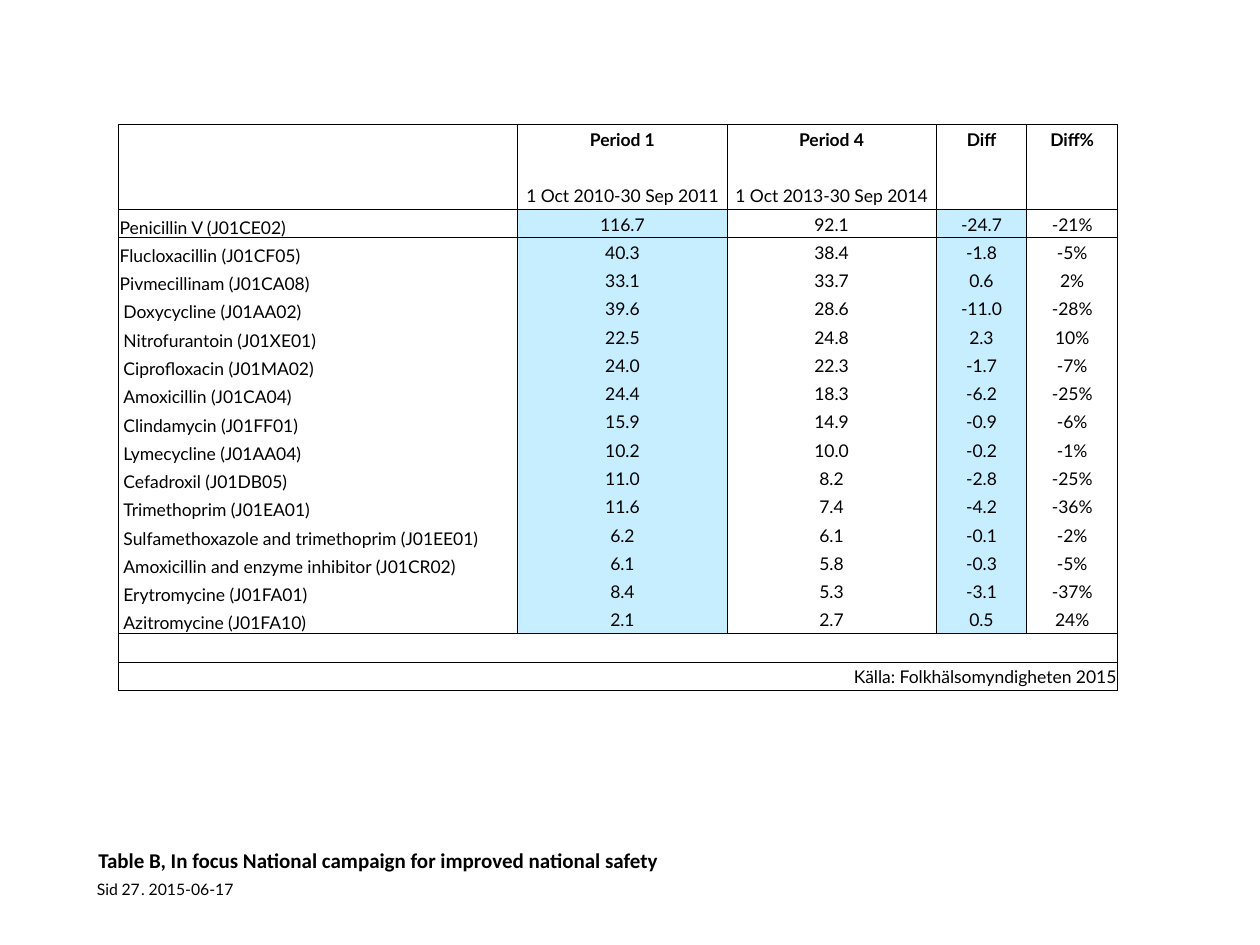
from typing import NamedTuple

from lxml import etree
from pptx import Presentation
from pptx.dml.color import RGBColor
from pptx.enum.text import MSO_ANCHOR, MSO_AUTO_SIZE, PP_ALIGN
from pptx.oxml.ns import qn
from pptx.util import Inches, Pt

LEFT, CENTER, RIGHT = PP_ALIGN.LEFT, PP_ALIGN.CENTER, PP_ALIGN.RIGHT
TOP, MIDDLE, BOTTOM = MSO_ANCHOR.TOP, MSO_ANCHOR.MIDDLE, MSO_ANCHOR.BOTTOM
NO_AUTOSIZE = MSO_AUTO_SIZE.NONE
BLACK = "000000"
LIGHT_BLUE = "C6EEFF"
PLAIN_TABLE_STYLE = "{2D5ABB26-0587-4C30-8999-92F81FD0307C}"
TITLE_ONLY_LAYOUT = 5
COLUMN_WIDTHS = (3.17, 1.66, 1.66, 0.72, 0.72)
SHADED_COLUMNS = (1, 3)
ROW_COUNT = 20
TABLE_HEIGHT = 4.49
FIRST_DRUG_ROW = 3
FLUSH_DRUGS = 3
SOURCE_CELL = (19, 2)


class Drug(NamedTuple):
    name: str
    period_1: str
    period_4: str
    difference: str
    percent: str


class FooterText(NamedTuple):
    text: str
    left: float
    top: float
    width: float
    height: float
    alignment: PP_ALIGN = LEFT
    anchor: MSO_ANCHOR = BOTTOM


HEADINGS = ("", "Period 1", "Period 4", "Diff", "Diff%")
PERIODS = ("", "1 Oct 2010-30 Sep 2011", "1 Oct 2013-30 Sep 2014", "", "")
DRUGS = (
    Drug("Penicillin V (J01CE02)", "116.7", "92.1", "-24.7", "-21%"),
    Drug("Flucloxacillin (J01CF05)", "40.3", "38.4", "-1.8", "-5%"),
    Drug("Pivmecillinam (J01CA08)", "33.1", "33.7", "0.6", "2%"),
    Drug("Doxycycline (J01AA02)", "39.6", "28.6", "-11.0", "-28%"),
    Drug("Nitrofurantoin (J01XE01)", "22.5", "24.8", "2.3", "10%"),
    Drug("Ciprofloxacin (J01MA02)", "24.0", "22.3", "-1.7", "-7%"),
    Drug("Amoxicillin (J01CA04)", "24.4", "18.3", "-6.2", "-25%"),
    Drug("Clindamycin (J01FF01)", "15.9", "14.9", "-0.9", "-6%"),
    Drug("Lymecycline (J01AA04)", "10.2", "10.0", "-0.2", "-1%"),
    Drug("Cefadroxil (J01DB05)", "11.0", "8.2", "-2.8", "-25%"),
    Drug("Trimethoprim (J01EA01)", "11.6", "7.4", "-4.2", "-36%"),
    Drug("Sulfamethoxazole and trimethoprim (J01EE01)", "6.2", "6.1", "-0.1", "-2%"),
    Drug("Amoxicillin and enzyme inhibitor (J01CR02)", "6.1", "5.8", "-0.3", "-5%"),
    Drug("Erytromycine (J01FA01)", "8.4", "5.3", "-3.1", "-37%"),
    Drug("Azitromycine (J01FA10)", "2.1", "2.7", "0.5", "24%"),
)
FOOTERS = (
    FooterText(".", 1.12, 6.98, 0.06, 0.15, anchor=TOP),
    FooterText("Sid", 0.77, 6.98, 0.17, 0.15, anchor=TOP),
    FooterText("27", 0.78, 6.93, 0.33, 0.2, alignment=RIGHT),
    FooterText("2015-06-17", 1.18, 6.93, 0.86, 0.2),
)


def color(value: str) -> RGBColor:
    return RGBColor.from_string(value)


def format_paragraph(paragraph, size: float, name: str = "Lato", bold: bool = False) -> None:
    paragraph.font.size = Pt(size)
    paragraph.font.name = name
    paragraph.font.bold = bold
    paragraph.font.color.rgb = color(BLACK)


def clear_margins(frame) -> None:
    frame.margin_left = frame.margin_right = 0
    frame.margin_top = frame.margin_bottom = 0


def add_border(cell, tag: str) -> None:
    line = etree.SubElement(cell._tc.get_or_add_tcPr(), qn(tag), w=str(Pt(0.5)))
    fill = etree.SubElement(line, qn("a:solidFill"))
    etree.SubElement(fill, qn("a:srgbClr"), val=BLACK)


def draw_borders(cell, row: int, column: int) -> None:
    last_column = len(COLUMN_WIDTHS) - 1
    drug_end = FIRST_DRUG_ROW + len(DRUGS)
    in_grid = row < drug_end
    reaches_right = column == last_column or (row, column) == SOURCE_CELL
    if in_grid or column == 0:
        add_border(cell, "a:lnL")
    if in_grid or reaches_right:
        add_border(cell, "a:lnR")
    if row in (0, FIRST_DRUG_ROW, drug_end):
        add_border(cell, "a:lnT")
    if row in (FIRST_DRUG_ROW - 1, drug_end - 1, ROW_COUNT - 1):
        add_border(cell, "a:lnB")


def fill_cell(cell, row: int, column: int, text: str) -> None:
    is_drug = FIRST_DRUG_ROW <= row < FIRST_DRUG_ROW + len(DRUGS)
    is_name = is_drug and column == 0
    indented = is_name and row >= FIRST_DRUG_ROW + FLUSH_DRUGS
    draw_borders(cell, row, column)
    if is_drug and column in SHADED_COLUMNS:
        cell.fill.solid()
        cell.fill.fore_color.rgb = color(LIGHT_BLUE)
    else:
        cell.fill.background()
    cell.margin_left = Inches(0.04 if indented else 0.01)
    cell.margin_right = cell.margin_top = Inches(0.01)
    cell.margin_bottom = 0
    cell.vertical_anchor = BOTTOM if is_name else MIDDLE
    paragraph = cell.text_frame.paragraphs[0]
    if text:
        paragraph.text = text
    else:
        etree.SubElement(paragraph._p, qn("a:endParaRPr"), sz="1000")
    paragraph.alignment = LEFT if is_name else CENTER
    if (row, column) == SOURCE_CELL:
        paragraph.alignment = RIGHT
    format_paragraph(paragraph, 10, bold=row == 0)


def add_drug_table(slide) -> None:
    column_count = len(COLUMN_WIDTHS)
    table = slide.shapes.add_table(
        ROW_COUNT, column_count, Inches(0.94), Inches(0.99),
        Inches(sum(COLUMN_WIDTHS)), Inches(TABLE_HEIGHT),
    ).table
    table.first_row = table.horz_banding = False
    table._tbl.tblPr.find(qn("a:tableStyleId")).text = PLAIN_TABLE_STYLE
    for column, width in zip(table.columns, COLUMN_WIDTHS):
        column.width = Inches(width)
    for row in table.rows:
        row.height = Inches(TABLE_HEIGHT / ROW_COUNT)
    empty = ("",) * column_count
    source = ("", "", "Källa: Folkhälsomyndigheten 2015", "", "")
    contents = (HEADINGS, empty, PERIODS, *DRUGS, empty, source)
    for row, texts in enumerate(contents):
        for column, text in enumerate(texts):
            fill_cell(table.cell(row, column), row, column, text)
    table.cell(*SOURCE_CELL).merge(table.cell(ROW_COUNT - 1, column_count - 1))


def add_title(slide) -> None:
    title = slide.shapes.title
    title.left, title.top = Inches(0.78), Inches(6.48)
    title.width, title.height = Inches(4.69), Inches(0.45)
    frame = title.text_frame
    clear_margins(frame)
    frame.auto_size = NO_AUTOSIZE
    frame.vertical_anchor = BOTTOM
    frame.text = "Table B, In focus National campaign for improved national safety"
    paragraph = frame.paragraphs[0]
    paragraph.alignment = LEFT
    paragraph.line_spacing = Pt(34)
    format_paragraph(paragraph, 12, "Calibri", True)


def add_footer(slide, footer: FooterText) -> None:
    shape = slide.shapes.add_textbox(
        Inches(footer.left), Inches(footer.top),
        Inches(footer.width), Inches(footer.height),
    )
    frame = shape.text_frame
    clear_margins(frame)
    frame.word_wrap = footer.text != "Sid"
    frame.vertical_anchor = footer.anchor
    frame.text = footer.text
    frame.paragraphs[0].alignment = footer.alignment
    format_paragraph(frame.paragraphs[0], 9)


def main() -> None:
    presentation = Presentation()
    presentation.slide_width, presentation.slide_height = Inches(10), Inches(7.5)
    slide = presentation.slides.add_slide(presentation.slide_layouts[TITLE_ONLY_LAYOUT])
    for footer in FOOTERS:
        add_footer(slide, footer)
    add_title(slide)
    add_drug_table(slide)
    presentation.save("out.pptx")


if __name__ == "__main__":
    main()
